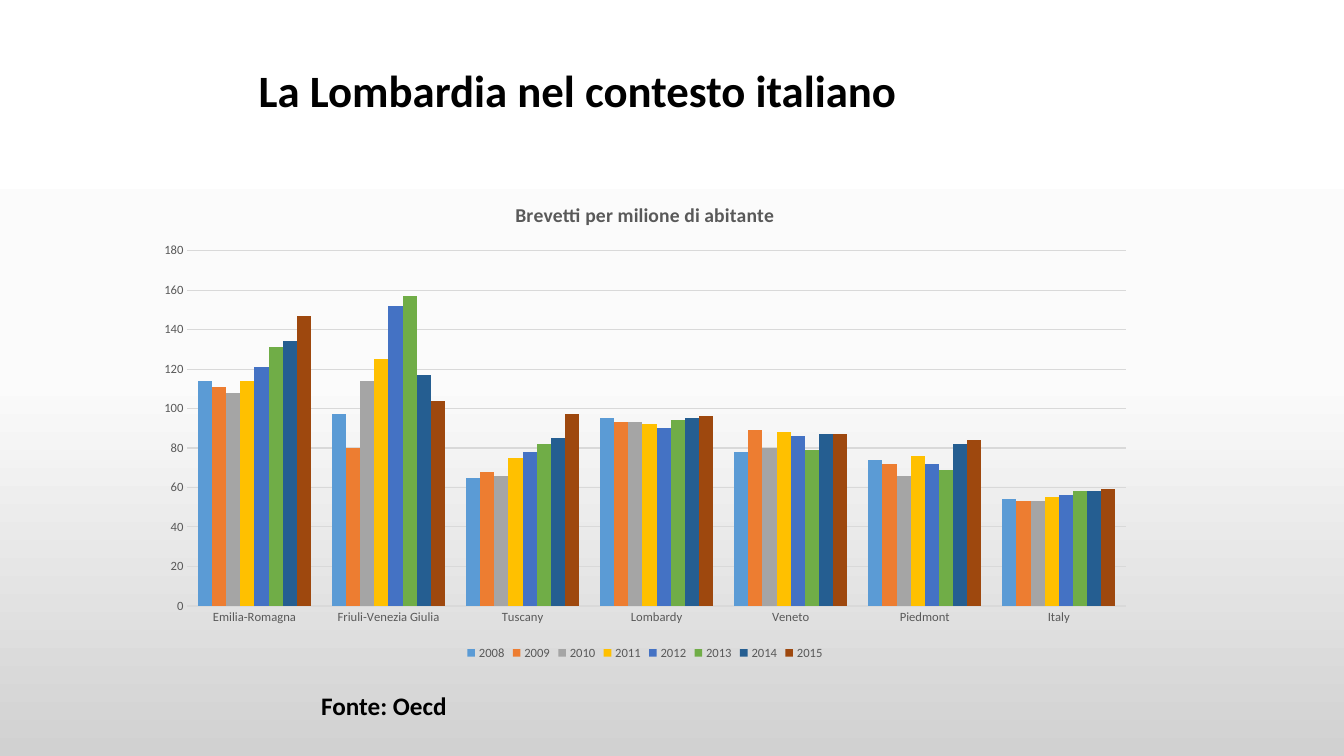
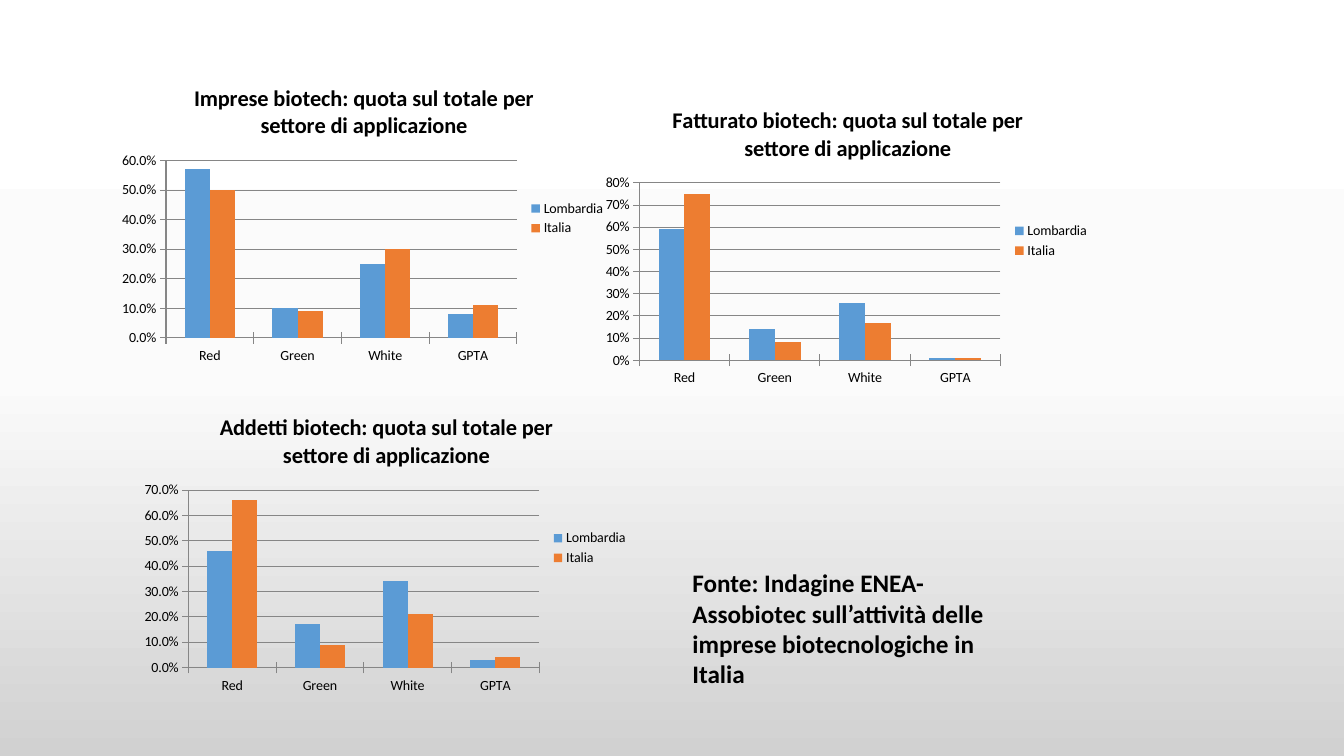
from copy import deepcopy

from pptx import Presentation
from pptx.chart import data
from pptx.dml.color import RGBColor
from pptx.enum import chart as kinds, text
from pptx.util import Pt

FONT = "Calibri"
COLORS = {
    "black": "000000", "label": "595959", "light_grid": "D9D9D9", "dark_grid": "868686",
    "blue": "5B9BD5", "orange": "ED7D31", "grey": "A5A5A5", "gold": "FFC000",
    "royal": "4472C4", "green": "70AD47", "navy": "255E91", "brown": "9E480E",
}
SERIES_COLORS = ["blue", "orange", "grey", "gold", "royal", "green", "navy", "brown"]
BACKGROUND_STOPS = [(0, "FFFFFF"), (0.5, "FBFBFB"), (1, "D1D1D1")]

REGIONS = ["Emilia-Romagna", "Friuli-Venezia Giulia", "Tuscany", "Lombardy",
           "Veneto", "Piedmont", "Italy"]
PATENTS = {
    "2008": [114, 97, 65, 95, 78, 74, 54],
    "2009": [111, 80, 68, 93, 89, 72, 53],
    "2010": [108, 114, 66, 93, 80, 66, 53],
    "2011": [114, 125, 75, 92, 88, 76, 55],
    "2012": [121, 152, 78, 90, 86, 72, 56],
    "2013": [131, 157, 82, 94, 79, 69, 58],
    "2014": [134, 117, 85, 95, 87, 82, 58],
    "2015": [147, 104, 97, 96, 87, 84, 59],
}
SECTORS = ["Red", "Green", "White", "GPTA"]
BIOTECH_CHARTS = [
    ("Imprese", (80, 48), "0.0%", 0.6,
     {"Lombardia": [0.57, 0.1, 0.25, 0.08], "Italia": [0.5, 0.09, 0.3, 0.11]}),
    ("Fatturato", (425.5, 64), "0%", 0.8,
     {"Lombardia": [0.59, 0.14, 0.26, 0.01], "Italia": [0.75, 0.08, 0.17, 0.01]}),
    ("Addetti", (96, 283.5), "0.0%", 0.7,
     {"Lombardia": [0.46, 0.17, 0.34, 0.03], "Italia": [0.66, 0.09, 0.21, 0.04]}),
]


def color(name):
    return RGBColor.from_string(COLORS[name])


def style_font(font, size, color_name="black", bold=False):
    font.name = FONT
    font.size = Pt(size)
    font.bold = bold
    font.color.rgb = color(color_name)


def add_text(slide, box, content, size=18, align=text.PP_ALIGN.LEFT, wrap=True):
    shape = slide.shapes.add_textbox(*map(Pt, box))
    frame = shape.text_frame
    frame.word_wrap = wrap
    frame.auto_size = text.MSO_AUTO_SIZE.SHAPE_TO_FIT_TEXT
    paragraph = frame.paragraphs[0]
    paragraph.alignment = align
    run = paragraph.add_run()
    run.text = content
    style_font(run.font, size, bold=True)


def add_slide(presentation):
    slide = presentation.slides.add_slide(presentation.slide_layouts[6])
    fill = slide.background.fill
    fill.gradient()
    fill.gradient_angle = 270
    stop_list = slide.element.xpath(".//p:bg//a:gsLst")[0]
    stop_list.append(deepcopy(stop_list[0]))
    for stop, (position, value) in zip(fill.gradient_stops, BACKGROUND_STOPS):
        stop.position = position
        stop.color.rgb = RGBColor.from_string(value)
    return slide


def style_axis(axis, size, color_name, tick, line_color):
    style_font(axis.tick_labels.font, size, color_name)
    axis.major_tick_mark = tick
    axis.minor_tick_mark = kinds.XL_TICK_MARK.NONE
    if line_color:
        axis.format.line.color.rgb = color(line_color)
        axis.format.line.width = Pt(0.75)
    else:
        axis.format.line.fill.background()


def add_columns(slide, box, title, categories, series, maximum, step, number_format="General",
                title_size=16, label_size=10, text_color="black", grid="dark_grid",
                axis_line="dark_grid", tick=kinds.XL_TICK_MARK.CROSS,
                legend=kinds.XL_LEGEND_POSITION.RIGHT):
    chart_data = data.CategoryChartData(number_format=number_format)
    chart_data.categories = categories
    for name, values in series.items():
        chart_data.add_series(name, values)
    chart = slide.shapes.add_chart(
        kinds.XL_CHART_TYPE.COLUMN_CLUSTERED, *map(Pt, box), chart_data).chart
    style_font(chart.font, 10)

    chart.has_title = True
    run = chart.chart_title.text_frame.paragraphs[0].add_run()
    run.text = title
    style_font(run.font, title_size, text_color, bold=True)

    chart.has_legend = True
    chart.legend.position = legend
    chart.legend.include_in_layout = False
    style_font(chart.legend.font, label_size, text_color)

    for axis in (chart.category_axis, chart.value_axis):
        style_axis(axis, label_size, text_color, tick, axis_line)
    value_axis = chart.value_axis
    value_axis.minimum_scale = 0
    value_axis.maximum_scale = maximum
    value_axis.major_unit = step
    value_axis.tick_labels.number_format = number_format
    value_axis.tick_labels.number_format_is_linked = False
    value_axis.major_gridlines.format.line.color.rgb = color(grid)
    value_axis.major_gridlines.format.line.width = Pt(0.75)

    plot = chart.plots[0]
    plot.gap_width = 150
    plot.overlap = 0
    plot.vary_by_categories = False
    for columns, color_name in zip(plot.series, SERIES_COLORS):
        columns.format.fill.solid()
        columns.format.fill.fore_color.rgb = color(color_name)
        columns.invert_if_negative = False


def build_patents_slide(presentation):
    slide = add_slide(presentation)
    add_columns(slide, (103, 130.5, 715.5, 344), "Brevetti per milione di abitante",
                REGIONS, PATENTS, 180, 20, title_size=14, label_size=9, text_color="label",
                grid="light_grid", axis_line=None, tick=kinds.XL_TICK_MARK.NONE,
                legend=kinds.XL_LEGEND_POSITION.BOTTOM)
    add_text(slide, (175.5, 41, 474.5, 46), "La Lombardia nel contesto italiano",
             size=32, align=text.PP_ALIGN.CENTER, wrap=False)
    add_text(slide, (213, 489.5, 122.5, 29), "Fonte: Oecd", align=text.PP_ALIGN.CENTER)


def build_biotech_slide(presentation):
    slide = add_slide(presentation)
    add_text(slide, (487.5, 402, 243.5, 94.5),
             "Fonte: Indagine ENEA-Assobiotec sull’attività delle imprese biotecnologiche in Italia")
    for subject, corner, number_format, maximum, series in BIOTECH_CHARTS:
        add_columns(slide, (*corner, 360, 216),
                    f"{subject} biotech: quota sul totale per settore di applicazione",
                    SECTORS, series, maximum, 0.1, number_format)


def main():
    presentation = Presentation()
    presentation.slide_width = Pt(960)
    presentation.slide_height = Pt(540)
    build_patents_slide(presentation)
    build_biotech_slide(presentation)
    presentation.save("out.pptx")


if __name__ == "__main__":
    main()
